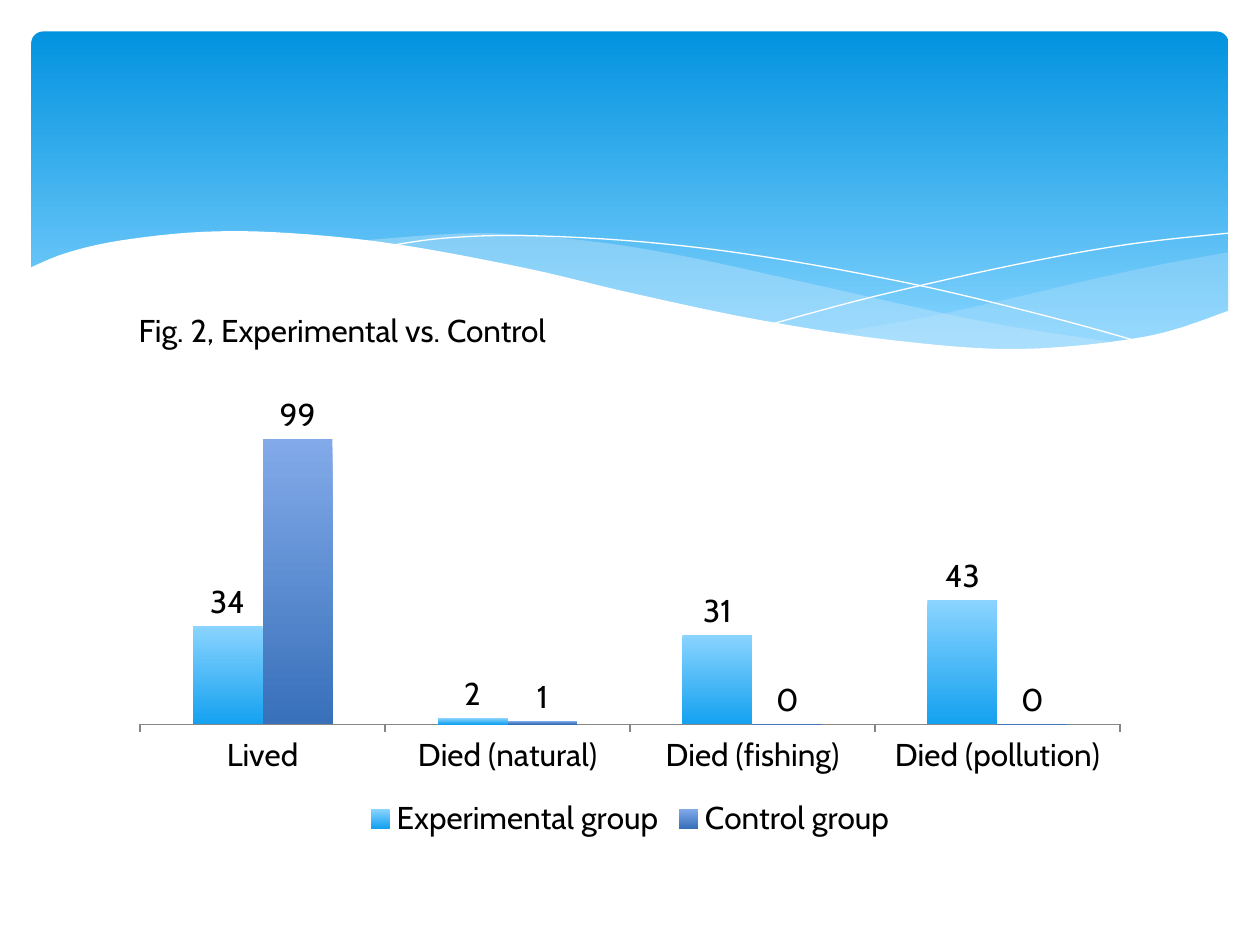
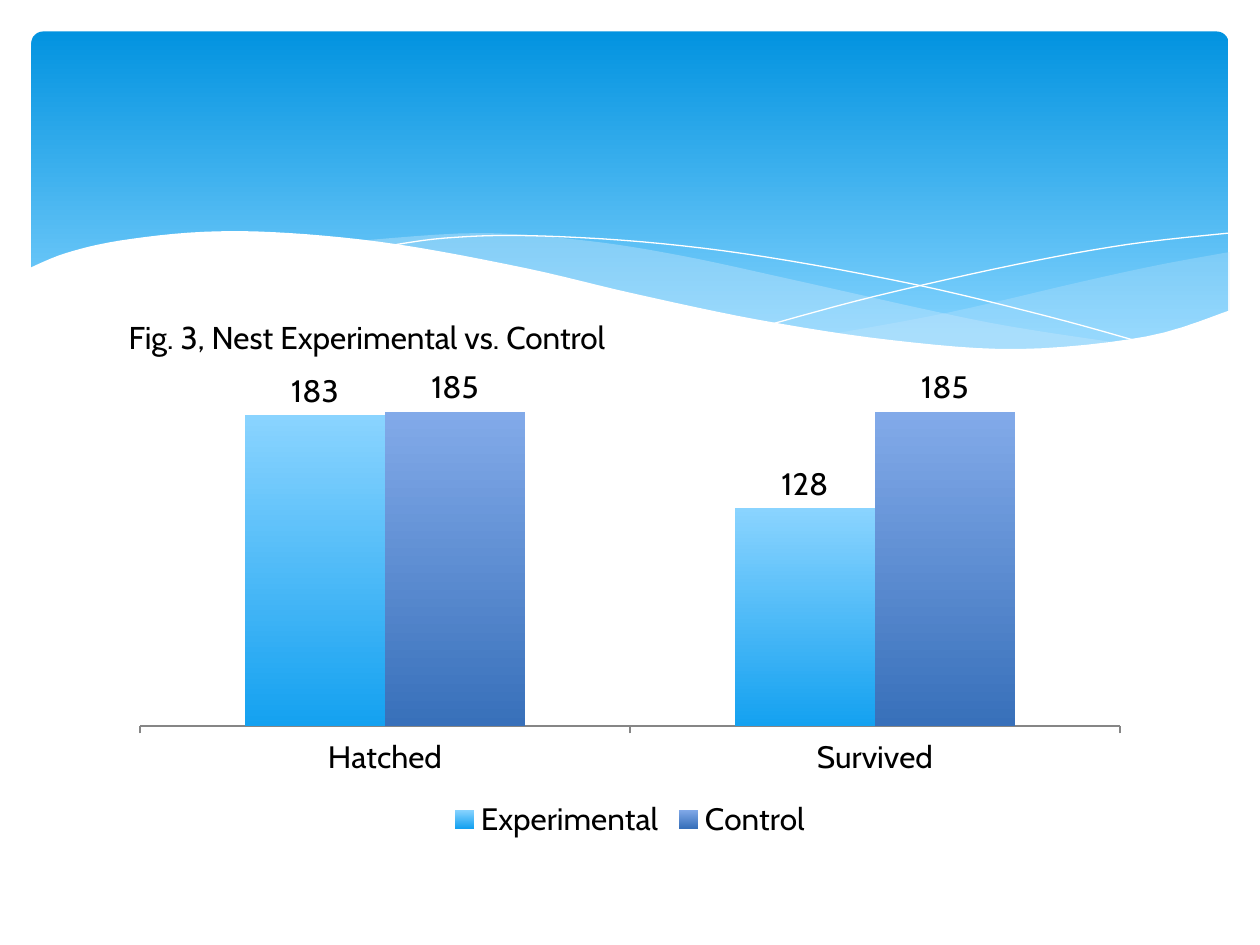
from collections import namedtuple

from lxml import etree
from pptx import Presentation
from pptx.chart.data import CategoryChartData
from pptx.dml.color import RGBColor
from pptx.enum.chart import XL_CHART_TYPE as ChartType
from pptx.enum.chart import XL_LABEL_POSITION as LabelPosition
from pptx.enum.chart import XL_LEGEND_POSITION as LegendPosition
from pptx.enum.chart import XL_TICK_MARK as TickMark
from pptx.enum.shapes import MSO_SHAPE as Preset
from pptx.enum.text import MSO_ANCHOR as Anchor
from pptx.enum.text import MSO_AUTO_SIZE as AutoSize
from pptx.enum.text import PP_ALIGN as Align
from pptx.oxml.ns import qn
from pptx.util import Inches, Pt

Box = namedtuple("Box", "left top width height")
Figure = namedtuple("Figure", "caption caption_box categories series axis_max")

# Shared look
FONT = "Cabin"
TEXT_SIZE = Pt(18)
BLACK, WHITE, AXIS_GREY, PALE_BLUE = "000000", "FFFFFF", "868686", "C6E7FC"
BAND_COLOURS = ("0293E0", "83D3FE")
SERIES_COLOURS = (("8AD4FF", "14A1F0"), ("82AAE9", "3870BA"))
SLIDE_BOX = Box(0, 0, 10, 7.5)
CHART_BOX = Box(0.95, 2.93, 8.1, 3.77)

# Waves: each strand is a list of knots that a smooth curve runs through
RIGHT_SWELL = [
    [(9.76, 2), (9.21, 2.1), (8.61, 2.23), (7.53, 2.48), (6.61, 2.65)],
    [(6.61, 2.65), (7.32, 2.74), (8.03, 2.78), (8.72, 2.74), (9.28, 2.63),
     (9.76, 2.47)],
]
MIDDLE_SWELL = [
    [(8.93, 2.73), (8.07, 2.6), (7.41, 2.47), (6.29, 2.22), (5.41, 2.03),
     (4.65, 1.91), (3.8, 1.85), (2.86, 1.91)],
    [(2.86, 1.91), (3.62, 2.03), (4.49, 2.22), (5.66, 2.48), (6.5, 2.64),
     (7.22, 2.74), (8.07, 2.78), (8.93, 2.73)],
]
FALLING_LINE = [
    [(3.09, 1.95), (3.53, 1.89), (4.16, 1.87), (5.1, 1.92), (6.08, 2.04),
     (7.27, 2.26), (8.31, 2.51), (9.07, 2.72)],
]
RISING_LINE = [
    [(6.13, 2.57), (6.95, 2.35), (8.06, 2.1), (8.95, 1.94), (9.75, 1.85)],
]
WHITE_WAVE = [
    [(9.77, 2.46), (9.1, 2.67), (8.09, 2.77), (7.08, 2.7), (6.03, 2.54),
     (5.03, 2.33), (4.18, 2.13), (3.16, 1.94), (2.3, 1.85), (1.61, 1.84),
     (0.95, 1.91), (0.52, 2.01), (0.23, 2.13)],
    [(0.23, 3.29), (9.77, 3.29)],
]

FIGURES = [
    Figure("Fig. 2, Experimental vs. Control", Box(1, 2.42, 4.33, 0.4),
           ["Lived", "Died (natural)", "Died (fishing)", "Died (pollution)"],
           {"Experimental group": (34, 2, 31, 43),
            "Control group": (99, 1, 0, 0)}, 120),
    Figure("Fig. 3, Nest Experimental vs. Control", Box(0.92, 2.47, 4.58, 0.42),
           ["Hatched", "Survived"],
           {"Experimental": (183, 128), "Control": (185, 185)}, 200),
]


def colour(code):
    return RGBColor.from_string(code)


def inches(box):
    return [Inches(length) for length in box]


def fill_downwards(fill, codes, end=1.0):
    """Vertical gradient from the first colour to the second."""
    fill.gradient()
    fill.gradient_angle = 270
    for stop, code, position in zip(fill.gradient_stops, codes, (0, end)):
        stop.color.rgb = colour(code)
        stop.position = position


def smooth(knots, steps=6):
    """Points of a Catmull-Rom curve through the knots."""
    padded = [knots[0], *knots, knots[-1]]
    points = [knots[0]]
    for a, b, c, d in zip(padded, padded[1:], padded[2:], padded[3:]):
        for step in range(1, steps + 1):
            t = step / steps
            points.append(tuple(
                (2 * q + (r - p) * t + (2 * p - 5 * q + 4 * r - s) * t ** 2
                 + (3 * q - p - 3 * r + s) * t ** 3) / 2
                for p, q, r, s in zip(a, b, c, d)))
    return points


def draw_wave(page, box, strands, closed):
    points = [(Inches(box.left + x), Inches(box.top + y))
              for strand in strands for x, y in smooth(strand)]
    builder = page.shapes.build_freeform(*points[0])
    builder.add_line_segments(points[1:], close=closed)
    wave = builder.convert_to_shape()
    wave.shadow.inherit = False
    return wave


def add_swell(page, box, strands, code, opacity=100):
    swell = draw_wave(page, box, strands, closed=True)
    swell.fill.solid()
    swell.fill.fore_color.rgb = colour(code)
    swell.line.fill.background()
    if opacity < 100:
        tint = swell.element.spPr.find(qn("a:solidFill"))[0]
        etree.SubElement(tint, qn("a:alpha"), val=str(opacity * 1000))
    return swell


def add_hairline(page, box, strands):
    hairline = draw_wave(page, box, strands, closed=False)
    hairline.fill.background()
    hairline.line.color.rgb = colour(WHITE)
    hairline.line.width = Pt(0)
    return hairline


def add_band(page, box):
    margin = 0.25
    band = page.shapes.add_shape(Preset.ROUNDED_RECTANGLE, *inches(
        Box(box.left + margin, box.top + margin, box.width - 2 * margin, 2.7)))
    band.adjustments[0] = 0.034
    band.shadow.inherit = False
    band.line.fill.background()
    fill_downwards(band.fill, BAND_COLOURS, end=0.9)
    return band


def set_backdrop(layout, page, box):
    """Draw the band and waves on a page, then move them to its layout."""
    for holder in list(layout.placeholders):
        if holder.placeholder_format.idx:  # keep only the title
            layout.shapes.element.remove(holder.element)
    parts = [
        add_band(page, box),
        add_swell(page, box, RIGHT_SWELL, PALE_BLUE, 29),
        add_swell(page, box, MIDDLE_SWELL, PALE_BLUE, 40),
        add_hairline(page, box, FALLING_LINE),
        add_hairline(page, box, RISING_LINE),
        add_swell(page, box, WHITE_WAVE, WHITE),
    ]
    for part in parts:
        layout.shapes.element.append(part.element)


def set_caption(page, box, text):
    title = page.shapes.title
    title.left, title.top, title.width, title.height = inches(box)
    frame = title.text_frame
    frame.text = text
    frame.word_wrap = True
    frame.auto_size = AutoSize.SHAPE_TO_FIT_TEXT
    frame.vertical_anchor = Anchor.TOP
    para = frame.paragraphs[0]
    para.alignment = Align.LEFT
    style_font(para.runs[0].font)


def style_font(font):
    font.name = FONT
    font.size = TEXT_SIZE
    font.color.rgb = colour(BLACK)


def add_columns(page, box, figure):
    data = CategoryChartData()
    data.categories = figure.categories
    for name, values in figure.series.items():
        data.add_series(name, values)
    chart = page.shapes.add_chart(
        ChartType.COLUMN_CLUSTERED, *inches(box), data).chart
    style_font(chart.font)
    chart.has_title = False
    chart.has_legend = True
    chart.legend.position = LegendPosition.BOTTOM
    chart.legend.include_in_layout = False

    # Axes
    chart.category_axis.major_tick_mark = TickMark.OUTSIDE
    chart.category_axis.format.line.color.rgb = colour(AXIS_GREY)
    chart.value_axis.visible = False
    chart.value_axis.has_major_gridlines = False
    chart.value_axis.minimum_scale = 0
    chart.value_axis.maximum_scale = figure.axis_max

    # Columns and their values
    plot = chart.plots[0]
    plot.gap_width = 150
    plot.overlap = 0
    plot.vary_by_categories = False
    plot.has_data_labels = True
    plot.data_labels.show_value = True
    plot.data_labels.position = LabelPosition.OUTSIDE_END
    style_font(plot.data_labels.font)
    for series, codes in zip(plot.series, SERIES_COLOURS):
        fill_downwards(series.format.fill, codes)


def main():
    deck = Presentation()
    deck.slide_width = Inches(SLIDE_BOX.width)
    deck.slide_height = Inches(SLIDE_BOX.height)
    layout = deck.slide_layouts.get_by_name("Title Only")
    pages = [deck.slides.add_slide(layout) for _ in FIGURES]
    set_backdrop(layout, pages[0], SLIDE_BOX)
    for page, figure in zip(pages, FIGURES):
        add_columns(page, CHART_BOX, figure)
        set_caption(page, figure.caption_box, figure.caption)
    deck.save("out.pptx")


if __name__ == "__main__":
    main()
